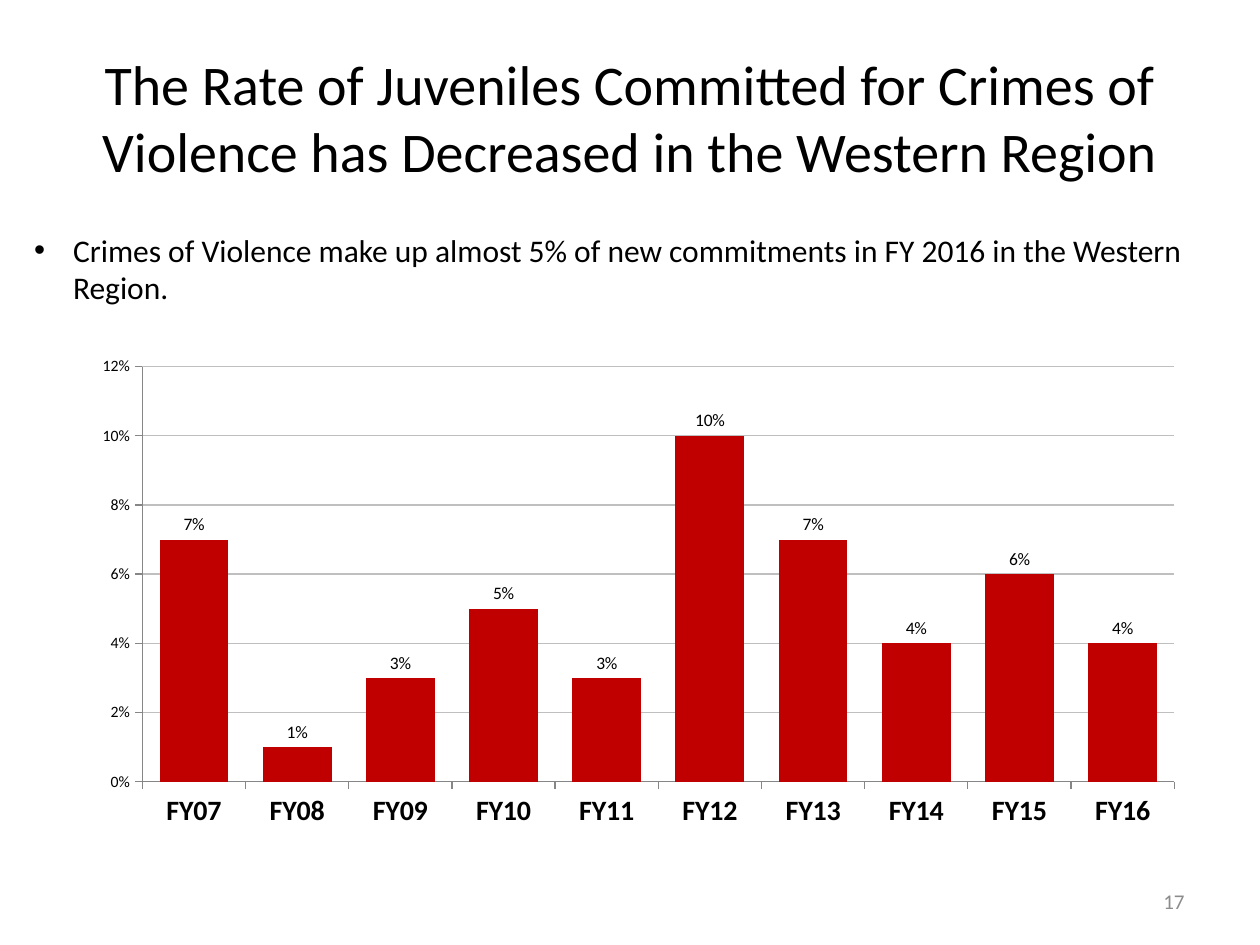
from dataclasses import dataclass

from lxml.etree import SubElement
from pptx import Presentation
from pptx.chart.data import CategoryChartData
from pptx.dml.color import RGBColor
from pptx.enum.chart import XL_CHART_TYPE as ChartType, XL_LABEL_POSITION as LabelPosition
from pptx.enum.chart import XL_TICK_MARK as TickMark
from pptx.enum.text import MSO_ANCHOR as Anchor, MSO_AUTO_SIZE as AutoSize, PP_ALIGN as Align
from pptx.oxml.ns import qn
from pptx.util import Inches, Pt


@dataclass(frozen=True)
class Theme:
    font: str = "Calibri"
    text: str = "000000"
    muted: str = "8C8C8C"
    bar: str = "C00000"
    grid: str = "BFBFBF"
    axis: str = "868686"
    title_size: int = 32
    body_size: int = 18
    category_size: int = 16
    number_size: int = 12
    label_size: int = 10
    scale_size: int = 9


def apply_format(target, values):
    for name, value in values.items():
        setattr(target, name, value)


class SlideBuilder:
    """Adds styled elements to one slide."""

    def __init__(self, slide, theme):
        self.slide = slide
        self.theme = theme

    def style_font(self, font, size, color=None, bold=False):
        apply_format(font, {"name": self.theme.font, "size": Pt(size), "bold": bold})
        font.color.rgb = RGBColor.from_string(color or self.theme.text)

    def place(self, shape, box):
        sides = zip(("left", "top", "width", "height"), map(Inches, box))
        apply_format(shape, dict(sides))

    def set_text(self, shape, text, size, color=None, align=Align.LEFT, anchor=Anchor.MIDDLE):
        frame = shape.text_frame
        frame.text = text
        apply_format(frame, {"word_wrap": True, "auto_size": AutoSize.NONE,
                             "vertical_anchor": anchor})
        paragraph = frame.paragraphs[0]
        apply_format(paragraph, {"alignment": align, "space_before": Pt(0)})
        self.style_font(paragraph.runs[0].font, size, color)
        return paragraph

    def title(self, text, box):
        heading = self.slide.shapes.title
        self.place(heading, box)
        self.set_text(heading, text, self.theme.title_size, align=Align.CENTER)

    def bullet(self, text, box, indent):
        body = self.slide.placeholders[1]
        self.place(body, box)
        paragraph = self.set_text(body, text, self.theme.body_size, anchor=Anchor.TOP)
        properties = paragraph._p.get_or_add_pPr()
        properties.set("marL", str(Inches(indent)))
        properties.set("indent", str(-Inches(indent)))
        SubElement(properties, qn("a:buFont"), typeface="Arial")
        SubElement(properties, qn("a:buChar"), char="•")

    def page_number(self, text, box):
        number = self.slide.shapes.add_textbox(*map(Inches, box))
        self.set_text(number, text, self.theme.number_size, self.theme.muted, Align.RIGHT)

    def column_chart(self, rates, box, plot_area):
        data = CategoryChartData(number_format="0%")
        data.categories = list(rates)
        data.add_series("Series 1", rates.values())
        chart = self.slide.shapes.add_chart(
            ChartType.COLUMN_CLUSTERED, *map(Inches, box), data).chart
        apply_format(chart, {"has_legend": False, "has_title": False})
        self.style_font(chart.font, self.theme.label_size)
        self.style_plot(chart.plots[0])
        self.style_axis(chart.category_axis, self.theme.category_size, bold=True)
        self.style_axis(chart.value_axis, self.theme.scale_size)
        self.style_scale(chart.value_axis)
        self.fix_plot_area(chart, plot_area)

    def style_plot(self, plot):
        apply_format(plot, {"gap_width": 50, "vary_by_categories": False,
                            "has_data_labels": True})
        apply_format(plot.data_labels, {
            "show_value": True, "number_format": "0%", "number_format_is_linked": False,
            "position": LabelPosition.OUTSIDE_END})
        self.style_font(plot.data_labels.font, self.theme.label_size)
        fill = plot.series[0].format.fill
        fill.solid()
        fill.fore_color.rgb = RGBColor.from_string(self.theme.bar)

    def style_line(self, line, color):
        line.color.rgb = RGBColor.from_string(color)
        line.width = Pt(0.75)

    def style_axis(self, axis, size, bold=False):
        apply_format(axis, {"major_tick_mark": TickMark.OUTSIDE,
                            "minor_tick_mark": TickMark.NONE})
        self.style_font(axis.tick_labels.font, size, bold=bold)
        self.style_line(axis.format.line, self.theme.axis)

    def style_scale(self, axis):
        apply_format(axis, {"minimum_scale": 0, "maximum_scale": 0.12, "major_unit": 0.02,
                            "has_major_gridlines": True})
        apply_format(axis.tick_labels, {"number_format": "0%",
                                        "number_format_is_linked": False})
        self.style_line(axis.major_gridlines.format.line, self.theme.grid)

    def fix_plot_area(self, chart, plot_area):
        area = chart._chartSpace.chart.plotArea
        for old in area.findall(qn("c:layout")):
            area.remove(old)
        layout = SubElement(area, qn("c:layout"))
        area.insert(0, layout)
        manual = SubElement(layout, qn("c:manualLayout"))
        settings = [("layoutTarget", "inner"), ("xMode", "edge"), ("yMode", "edge")]
        for tag, value in settings + list(zip("xywh", plot_area)):
            SubElement(manual, qn(f"c:{tag}"), val=str(value))


def main():
    presentation = Presentation()
    apply_format(presentation, {"slide_width": Inches(10), "slide_height": Inches(7.5)})
    slide = presentation.slides.add_slide(presentation.slide_layouts[1])
    builder = SlideBuilder(slide, Theme())

    builder.title("The Rate of Juveniles Committed for Crimes of Violence has Decreased "
                  "in the Western Region", (0.5, 0.3, 9, 1.25))
    builder.page_number("17", (7.17, 6.95, 2.33, 0.4))
    builder.bullet("Crimes of Violence make up almost 5% of new commitments in FY 2016 "
                   "in the Western Region.", (0.17, 1.78, 9.58, 0.71), indent=0.31)

    yearly_rates = (0.07, 0.01, 0.03, 0.05, 0.03, 0.1, 0.07, 0.04, 0.06, 0.04)
    rates = {f"FY{year:02}": rate for year, rate in enumerate(yearly_rates, start=7)}
    builder.column_chart(rates, (0.5, 2.58, 9, 4.12), plot_area=(0.07, 0.08, 0.91, 0.8))

    presentation.save("out.pptx")


if __name__ == "__main__":
    main()
